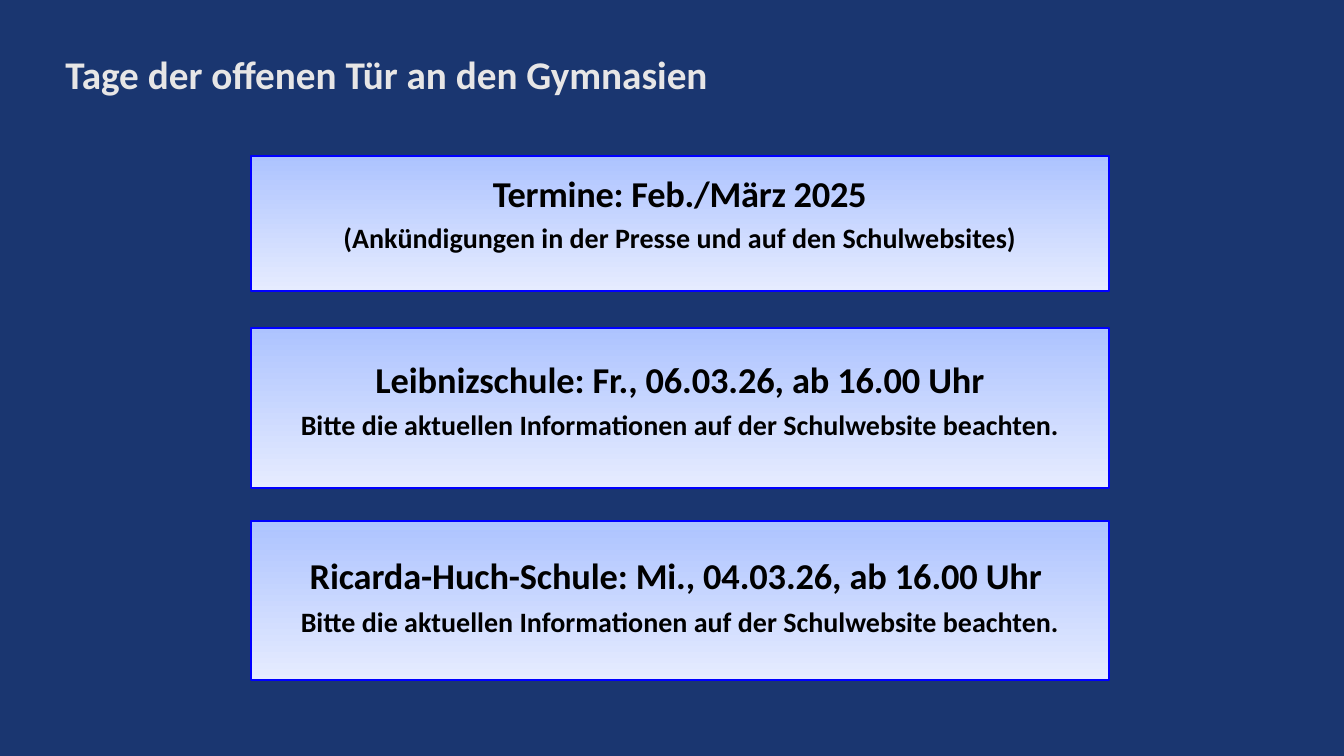
"""Build the slide announcing the open days at the grammar schools."""
from pptx import Presentation
from pptx.dml.color import RGBColor
from pptx.enum.shapes import MSO_SHAPE
from pptx.enum.text import MSO_ANCHOR, PP_ALIGN
from pptx.util import Pt

RECTANGLE = MSO_SHAPE.RECTANGLE
TOP, MIDDLE = MSO_ANCHOR.TOP, MSO_ANCHOR.MIDDLE
LEFT, CENTER = PP_ALIGN.LEFT, PP_ALIGN.CENTER

NAVY = RGBColor(0x1A, 0x36, 0x70)
LIGHT_GRAY = RGBColor(0xE7, 0xE6, 0xE6)
BLACK = RGBColor(0, 0, 0)
BLUE = RGBColor(0, 0, 0xFF)
GRADIENT = (RGBColor(0xAD, 0xC3, 0xFF), RGBColor(0xE6, 0xEC, 0xFF))

TITLE = "Tage der offenen Tür an den Gymnasien"
NOTICE = "Bitte die aktuellen Informationen auf der Schulwebsite beachten."
CARDS = [
    {"heading": "Termine: Feb./März 2025",
     "detail": "(Ankündigungen in der Presse und auf den Schulwebsites)",
     "top": 111.6, "height": 96.5, "inset": 13.7,
     "line_spacing": 0.92, "gap": 6, "tracking": (-20, 0)},
    {"heading": "Leibnizschule: Fr., 06.03.26, ab 16.00 Uhr",
     "detail": NOTICE,
     "top": 234, "height": 114.5, "inset": 20.8,
     "line_spacing": 1.0, "gap": 5, "tracking": (-10, 0)},
    {"heading": "Ricarda-Huch-Schule: Mi., 04.03.26, ab 16.00 Uhr ",
     "detail": NOTICE,
     "top": 372.2, "height": 113.8, "inset": 22.7,
     "line_spacing": 1.0, "gap": 6, "tracking": (-10, 0)},
]
CARD_LEFT, CARD_WIDTH = 179.3, 612.7
SIDE_INSET = 3.6
HEADING_SIZE, DETAIL_SIZE, TITLE_SIZE = 26, 20, 28


def set_values(target, values):
    """Set each named attribute on the target."""
    for name, value in values.items():
        setattr(target, name, value)


def write_paragraph(paragraph, text, size, color, layout, tracking=0):
    """Write one bold line with its paragraph layout."""
    set_values(paragraph, layout)
    run = paragraph.add_run()
    run.text = text
    set_values(run.font, {"name": "Calibri", "size": Pt(size), "bold": True})
    run.font.color.rgb = color
    if tracking:
        run._r.get_or_add_rPr().set("spc", str(tracking))


def add_title(slide):
    """Add the slide title."""
    box = slide.shapes.add_textbox(Pt(39.6), Pt(23.8), Pt(613.4), Pt(61.9))
    frame = box.text_frame
    set_values(frame, {"word_wrap": True, "vertical_anchor": MIDDLE})
    write_paragraph(frame.paragraphs[0], TITLE, TITLE_SIZE, LIGHT_GRAY,
                    {"alignment": LEFT, "line_spacing": 0.9})


def add_card(slide, card):
    """Add one gradient card with a heading and a detail line."""
    shape = slide.shapes.add_shape(RECTANGLE, Pt(CARD_LEFT), Pt(card["top"]),
                                   Pt(CARD_WIDTH), Pt(card["height"]))
    shape.shadow.inherit = False
    shape.fill.gradient()
    shape.fill.gradient_angle = 270
    for stop, color, position in zip(shape.fill.gradient_stops, GRADIENT, (0, 1)):
        stop.color.rgb = color
        stop.position = position
    shape.line.color.rgb = BLUE
    shape.line.width = Pt(1.5)
    frame = shape.text_frame
    set_values(frame, {
        "word_wrap": True, "vertical_anchor": TOP,
        "margin_left": Pt(SIDE_INSET), "margin_right": Pt(SIDE_INSET),
        "margin_top": Pt(card["inset"]), "margin_bottom": Pt(SIDE_INSET),
    })
    layout = {"alignment": CENTER, "line_spacing": card["line_spacing"]}
    heading_tracking, detail_tracking = card["tracking"]
    write_paragraph(frame.paragraphs[0], card["heading"], HEADING_SIZE, BLACK,
                    layout, heading_tracking)
    write_paragraph(frame.add_paragraph(), card["detail"], DETAIL_SIZE, BLACK,
                    {**layout, "space_before": Pt(card["gap"])}, detail_tracking)


def main():
    """Build and save the presentation."""
    presentation = Presentation()
    set_values(presentation, {"slide_width": Pt(960), "slide_height": Pt(540)})
    slide = presentation.slides.add_slide(presentation.slide_layouts[6])
    slide.background.fill.solid()
    slide.background.fill.fore_color.rgb = NAVY
    add_title(slide)
    for card in CARDS:
        add_card(slide, card)
    presentation.save("out.pptx")


if __name__ == "__main__":
    main()
